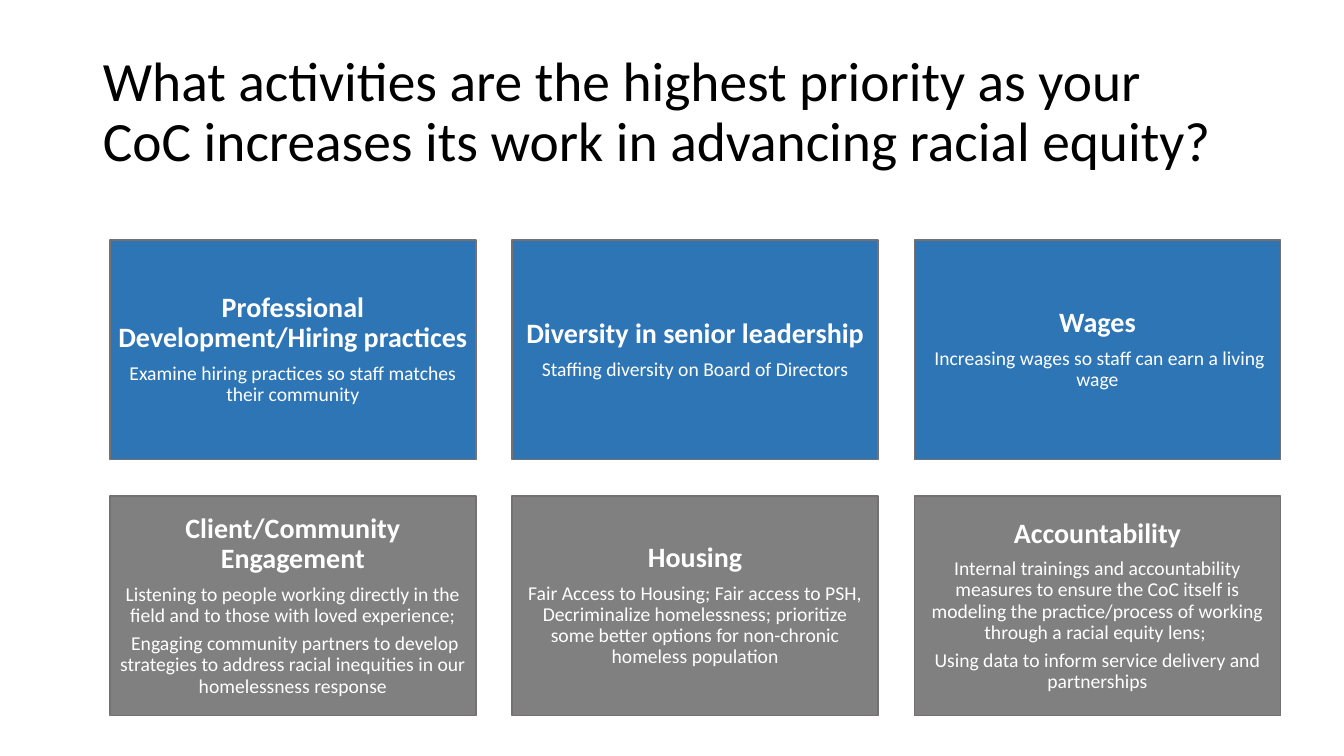
from dataclasses import dataclass

from pptx import Presentation
from pptx.dml.color import RGBColor
from pptx.enum.shapes import MSO_SHAPE
from pptx.enum.text import MSO_ANCHOR, MSO_AUTO_SIZE, PP_ALIGN
from pptx.util import Inches, Pt


@dataclass(frozen=True)
class Theme:
    font: str = "Calibri"
    title_size: float = 39.6
    heading_size: float = 20
    body_size: float = 14
    line_spacing: float = 0.9
    space_after_ratio: float = 0.35
    title_color: RGBColor = RGBColor(0x00, 0x00, 0x00)
    card_text: RGBColor = RGBColor(0xFF, 0xFF, 0xFF)
    card_border: RGBColor = RGBColor(0x76, 0x71, 0x71)
    row_fills: tuple = (RGBColor(0x2E, 0x75, 0xB6), RGBColor(0x80, 0x80, 0x80))


THEME = Theme()

TITLE = ("What activities are the highest priority as your CoC increases "
         "its work in advancing racial equity?")

ACTIVITY_ROWS = [
    [
        ("Professional Development/Hiring practices",
         ["Examine hiring practices so staff matches their community"]),
        ("Diversity in senior leadership",
         ["Staffing diversity on Board of Directors"]),
        ("Wages",
         [" Increasing wages so staff can earn a living wage"]),
    ],
    [
        ("Client/Community Engagement",
         ["Listening to people working directly in the field and to those "
          "with loved experience;",
          " Engaging community partners to develop strategies to address "
          "racial inequities in our homelessness response"]),
        ("Housing",
         ["Fair Access to Housing; Fair access to PSH, Decriminalize "
          "homelessness; prioritize some better options for non-chronic "
          "homeless population"]),
        ("Accountability",
         ["Internal trainings and accountability measures to ensure the CoC "
          "itself is modeling the practice/process of working through a "
          "racial equity lens; ",
          "Using data to inform service delivery and partnerships"]),
    ],
]


def add_run(paragraph, text, size, color, bold=False):
    run = paragraph.add_run()
    run.text = text
    run.font.name = THEME.font
    run.font.size = Pt(size)
    run.font.bold = bold
    run.font.color.rgb = color
    paragraph.line_spacing = THEME.line_spacing


def place_title(slide, left, top, width, height):
    title = slide.shapes.title
    title.left, title.top = Inches(left), Inches(top)
    title.width, title.height = Inches(width), Inches(height)
    frame = title.text_frame
    frame.word_wrap = True
    frame.auto_size = MSO_AUTO_SIZE.NONE
    frame.vertical_anchor = MSO_ANCHOR.MIDDLE
    paragraph = frame.paragraphs[0]
    paragraph.alignment = PP_ALIGN.LEFT
    add_run(paragraph, TITLE, THEME.title_size, THEME.title_color)


def add_card(slide, left, top, width, height, fill, heading, details):
    card = slide.shapes.add_shape(MSO_SHAPE.RECTANGLE, Inches(left), Inches(top),
                                  Inches(width), Inches(height))
    card.shadow.inherit = False
    card.fill.solid()
    card.fill.fore_color.rgb = fill
    card.line.color.rgb = THEME.card_border
    card.line.width = Pt(1)

    frame = card.text_frame
    frame.word_wrap = True
    frame.vertical_anchor = MSO_ANCHOR.MIDDLE
    frame.margin_left = frame.margin_right = Inches(0.08)
    frame.margin_top = frame.margin_bottom = Inches(0.08)
    for index, text in enumerate([heading, *details]):
        is_heading = index == 0
        paragraph = frame.paragraphs[0] if is_heading else frame.add_paragraph()
        size = THEME.heading_size if is_heading else THEME.body_size
        paragraph.alignment = PP_ALIGN.CENTER
        paragraph.space_after = Pt(size * THEME.space_after_ratio)
        add_run(paragraph, text, size, THEME.card_text, bold=is_heading)


def add_card_grid(slide, left, top, width, height, gap=0.36):
    """Fill the box with equal cards, one fill colour per row."""
    row_count, column_count = len(ACTIVITY_ROWS), len(ACTIVITY_ROWS[0])
    card_width = (width - gap * (column_count - 1)) / column_count
    card_height = (height - gap * (row_count - 1)) / row_count
    for row, (activities, fill) in enumerate(zip(ACTIVITY_ROWS, THEME.row_fills)):
        for column, (heading, details) in enumerate(activities):
            add_card(slide,
                     left + column * (card_width + gap),
                     top + row * (card_height + gap),
                     card_width, card_height, fill, heading, details)


def main():
    presentation = Presentation()
    presentation.slide_width = Inches(13.33)
    presentation.slide_height = Inches(7.5)
    title_only = presentation.slide_layouts.get_by_name("Title Only")
    slide = presentation.slides.add_slide(title_only)
    place_title(slide, 0.92, 0.4, 11.5, 1.45)
    add_card_grid(slide, 1.09, 2.38, 11.61, 4.72)
    presentation.save("out.pptx")


if __name__ == "__main__":
    main()
